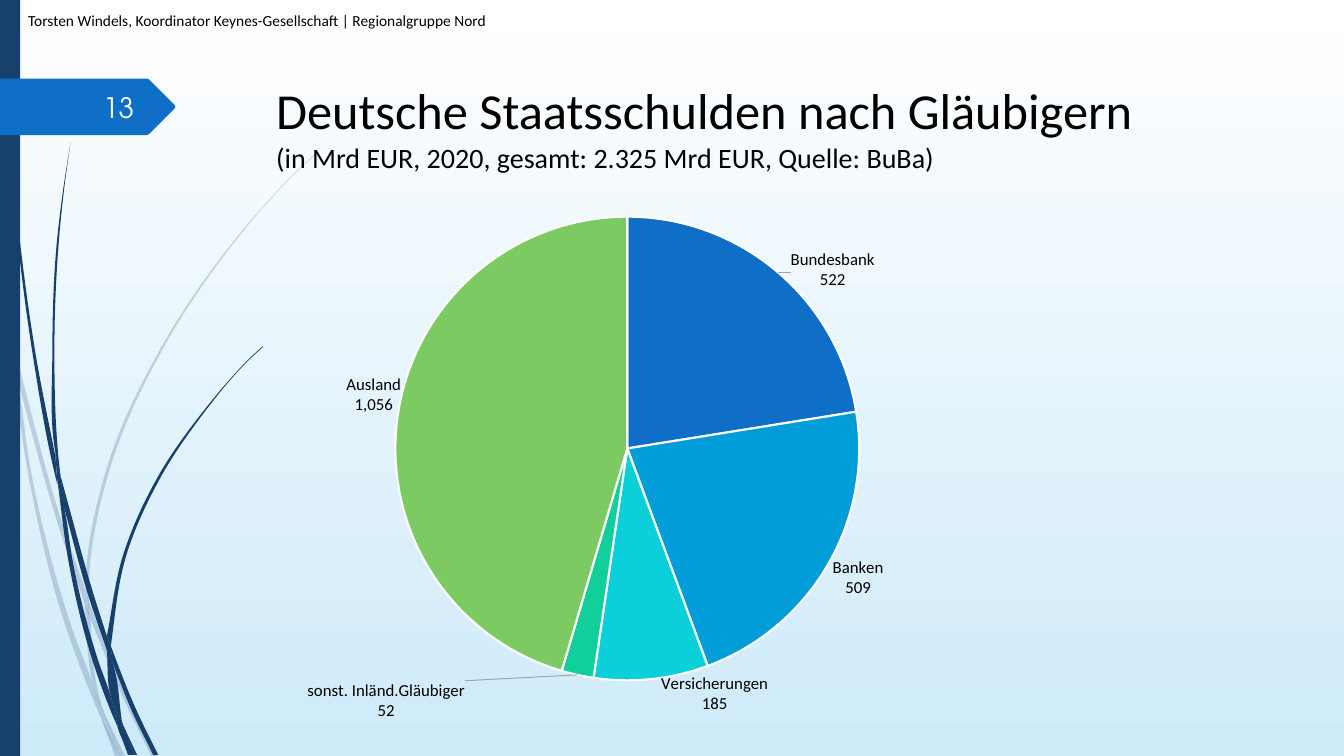
from copy import deepcopy
from math import dist
from typing import NamedTuple

from lxml.etree import SubElement
from pptx import Presentation
from pptx.chart.data import CategoryChartData
from pptx.dml.color import RGBColor
from pptx.enum.chart import XL_CHART_TYPE as ChartType, XL_LABEL_POSITION as LabelPosition
from pptx.enum.shapes import MSO_SHAPE as Shape
from pptx.enum.text import MSO_ANCHOR as Anchor, PP_ALIGN as Align
from pptx.oxml.ns import qn
from pptx.util import Emu, Pt

PX = 9144  # 100 px to the inch
NAVY, BLUE, BLACK, WHITE = "17406D", "0F6FC6", "000000", "FFFFFF"
Point = tuple[float, float]


class Ribbon(NamedTuple):
    """A tapering blade of grass: one edge out, the other edge back."""
    out: list[Point]
    back: list[Point]


class Slice(NamedTuple):
    name: str
    value: int
    colour: str
    label_shift: Point


PALE_GRASS = [
    Ribbon([(11, 350), (9, 322), (0, 282)], [(0, 299), (10, 344), (11, 350)]),
    Ribbon([(14, 345), (62, 520), (85, 586)], [(84, 599), (58, 522), (17, 376)]),
    Ribbon([(88, 596), (92, 607), (127, 692), (155, 750)], [(150, 750), (123, 694), (88, 610)]),
    Ribbon([(119, 750), (124, 750)], [(105, 711)]),
    Ribbon([(11, 350), (17, 376), (31, 469), (70, 619), (93, 683), (99, 707), (101, 714)],
           [(101, 714), (92, 693), (65, 621), (28, 470), (11, 350)]),
    Ribbon([(84, 599), (88, 608), (91, 646), (103, 706), (105, 711)],
           [(105, 711), (96, 692), (93, 683), (87, 646), (84, 599)]),
    Ribbon([(88, 596), (88, 584), (110, 462), (160, 349), (229, 245), (268, 198), (290, 175), (312, 154)],
           [(312, 153), (289, 175), (268, 197), (228, 244), (158, 348), (107, 461), (85, 584), (85, 586)]),
    Ribbon([(101, 714), (114, 750)], [(119, 750)]),
    Ribbon([(88, 610), (88, 596), (85, 586)], [(84, 599)]),
    Ribbon([(93, 683), (99, 707), (101, 714), (119, 750)], [(119, 750), (105, 711), (96, 692)]),
]
DARK_GRASS = [
    Ribbon([(3, 0), (4, 48), (7, 110), (17, 233), (33, 355), (56, 477), (57, 481)],
           [(55, 453), (36, 355), (19, 232), (8, 109), (5, 48), (4, 0)]),
    Ribbon([(60, 472), (93, 590), (106, 631)], [(106, 645), (88, 592), (64, 505)]),
    Ribbon([(110, 641), (113, 649), (136, 706), (157, 749)], [(152, 749), (132, 708), (111, 656)]),
    Ribbon([(57, 477), (64, 505), (72, 556), (98, 657), (110, 691), (116, 717), (117, 722)],
           [(117, 722), (111, 708), (93, 659), (68, 557), (57, 477)]),
    Ribbon([(60, 472), (58, 453), (54, 349), (58, 245), (63, 193), (70, 141)],
           [(70, 141), (62, 193), (56, 245), (52, 349), (55, 449), (60, 472)]),
    Ribbon([(133, 749), (136, 749)], [(122, 719)]),
    Ribbon([(57, 477), (64, 505), (60, 472)], [(55, 449), (55, 453)]),
    Ribbon([(110, 641), (111, 633), (125, 552), (158, 476), (205, 406), (231, 374), (245, 359), (261, 344)],
           [(260, 344), (245, 358), (231, 373), (204, 405), (156, 474), (122, 551), (106, 631)]),
    Ribbon([(117, 722), (127, 749)], [(131, 749)]),
    Ribbon([(106, 645), (110, 691), (116, 706), (122, 719)], [(121, 716), (111, 656), (109, 651)]),
    Ribbon([(106, 645), (111, 656), (110, 641)], [(106, 631)]),
    Ribbon([(110, 691), (116, 717), (117, 722), (130, 749)], [(133, 749), (122, 719), (116, 706)]),
]
FLAG = [(0, 78), (146, 78), (148, 79), (173, 104), (174, 106), (173, 108), (148, 133), (146, 134), (0, 134)]
SLICES = [
    Slice("Bundesbank", 522, BLUE, (0.01, 0.04)),
    Slice("Banken", 509, "009DD9", (0, -0.02)),
    Slice("Versicherungen", 185, "0BD0D9", (0.01, -0.02)),
    Slice("sonst. Inländ.Gläubiger", 52, "10CF9B", (-0.12, 0)),
    Slice("Ausland", 1056, "7CCA62", (0.01, 0)),
]


def rgb(colour: str) -> RGBColor:
    return RGBColor.from_string(colour)


def px(*lengths: float) -> list[Emu]:
    return [Emu(round(length * PX)) for length in lengths]


def bezier(knots: list[Point]) -> list[Point]:
    """Two control points and an end point for each span of a smooth curve."""
    spans = [dist(a, b) for a, b in zip(knots, knots[1:])]
    slopes = [((c - a) / span, (d - b) / span) for (a, b), (c, d), span in zip(knots, knots[1:], spans)]
    tangents = slopes[:1] + [
        tuple((f * after + g * before) / (before + after) for f, g in zip(first, second))
        for first, second, before, after in zip(slopes, slopes[1:], spans, spans[1:])] + slopes[-1:]
    points = []
    for (a, b), (c, d), (e, f), (g, h), span in zip(knots, knots[1:], tangents, tangents[1:], spans):
        third = span / 3
        points += [(a + e * third, b + f * third), (c - g * third, d - h * third), (c, d)]
    return points


def paint(shape, colour: str, opacity: int = 100) -> None:
    shape.shadow.inherit = False
    shape.line.fill.background()
    shape.fill.solid()
    shape.fill.fore_color.rgb = rgb(colour)
    if opacity < 100:
        tint = shape.fill._xPr.find(f".//{qn('a:srgbClr')}")
        SubElement(tint, qn("a:alpha"), val=str(opacity * 1000))


def add_outline(shapes, points: list[Point]):
    first, *rest = [px(*point) for point in points]
    builder = shapes.build_freeform(*first)
    builder.add_line_segments(rest, close=True)
    return builder.convert_to_shape()


def draw_grass(page, ribbons: list[Ribbon], opacity: int) -> None:
    group = page.shapes.add_group_shape()
    for out, back in ribbons:
        turn = bezier([out[-1], back[0]]) if out[-1] != back[0] else []
        blade = add_outline(group.shapes, [out[0], *bezier(out), *turn, *bezier(back)])
        lines = list(blade._element.iter(qn("a:lnTo")))
        for triple in zip(lines[::3], lines[1::3], lines[2::3]):
            curve = triple[0].makeelement(qn("a:cubicBezTo"))
            triple[0].addprevious(curve)
            for line in triple:
                curve.append(line[0])
                line.getparent().remove(line)
        paint(blade, NAVY, opacity)


def add_text(page, frame: tuple[int, int, int, int], *lines: tuple[str, int], font: str = "Calibri",
             colour: str = BLACK, align: Align = Align.LEFT, anchor: Anchor = Anchor.MIDDLE) -> None:
    """One paragraph; each line is a text with its size in points."""
    box = page.shapes.add_textbox(*px(*frame)).text_frame
    box.word_wrap, box.vertical_anchor = True, anchor
    para = box.paragraphs[0]
    para.alignment = align
    for index, (text, size) in enumerate(lines):
        if index:
            para.add_line_break()
        span = para.add_run()
        span.text = text
        span.font.name, span.font.size = font, Pt(size)
        span.font.color.rgb = rgb(colour)


def add_layout(parent, position: int, **values: float | str) -> None:
    layout = SubElement(parent, qn("c:layout"))
    parent.insert(position, layout)
    manual = SubElement(layout, qn("c:manualLayout"))
    for tag, value in values.items():
        SubElement(manual, qn(f"c:{tag}"), val=str(value))


def label_slices(labels) -> None:
    labels.show_category_name = labels.show_value = True
    labels.number_format, labels.number_format_is_linked = "#,##0", False
    labels.position = LabelPosition.OUTSIDE_END
    element = labels._element
    for old in element.findall(qn("c:showLeaderLines")):
        element.remove(old)
    SubElement(element, qn("c:separator")).text = "\n"
    shared = list(element)
    for index, part in enumerate(SLICES):
        label = SubElement(element, qn("c:dLbl"))
        element.insert(index, label)
        SubElement(label, qn("c:idx"), val=str(index))
        add_layout(label, 1, x=part.label_shift[0], y=part.label_shift[1])
        label.extend(deepcopy(child) for child in shared)
    SubElement(element, qn("c:showLeaderLines"), val="1")
    leader = SubElement(SubElement(element, qn("c:leaderLines")), qn("c:spPr"))
    line = SubElement(leader, qn("a:ln"), w=str(Pt(0.75)))
    SubElement(SubElement(line, qn("a:solidFill")), qn("a:srgbClr"), val="A6A6A6")


def add_creditor_pie(page) -> None:
    data = CategoryChartData(number_format="#,##0")
    data.categories = [part.name for part in SLICES]
    data.add_series("Series 1", [part.value for part in SLICES])
    chart = page.shapes.add_chart(ChartType.PIE, *px(153, 187, 920, 549), data).chart
    chart.has_title = chart.has_legend = False
    chart.font.name, chart.font.size = "Calibri", Pt(12)
    chart.font.color.rgb = rgb(BLACK)
    chart.plots[0].vary_by_categories = True
    series = chart.plots[0].series[0]
    for index, part in enumerate(SLICES):
        style = series.points[index].format
        style.fill.solid()
        style.fill.fore_color.rgb = rgb(part.colour)
        style.line.color.rgb, style.line.width = rgb(WHITE), Pt(1.5)
    label_slices(series.data_labels)
    area = chart._chartSpace.find(f".//{qn('c:plotArea')}")
    for old in area.findall(qn("c:layout")):
        area.remove(old)
    add_layout(area, 0, layoutTarget="inner", xMode="edge", yMode="edge", x=0.26, y=0.05, w=0.5, h=0.84)


def main() -> None:
    deck = Presentation()
    deck.slide_width, deck.slide_height = px(1333, 750)
    page = deck.slides.add_slide(deck.slide_layouts[6])
    backdrop = page.background.fill
    backdrop.gradient()
    backdrop.gradient_angle = 270
    for stop, colour in zip(backdrop.gradient_stops, (WHITE, "CEEAF9")):
        stop.color.rgb = rgb(colour)
    draw_grass(page, PALE_GRASS, opacity=20)
    draw_grass(page, DARK_GRASS, opacity=100)
    paint(page.shapes.add_shape(Shape.RECTANGLE, *px(0, 0, 20, 750)), NAVY)
    paint(add_outline(page.shapes, FLAG), BLUE)
    add_text(page, (264, 74, 1069, 106), ("Deutsche Staatsschulden nach Gläubigern", 36),
             ("(in Mrd EUR, 2020, gesamt: 2.325 Mrd EUR, Quelle: BuBa)", 20), anchor=Anchor.TOP)
    add_text(page, (58, 86, 85, 40), ("13", 20), font="TeX Gyre Adventor", colour="FEFFFF", align=Align.RIGHT)
    add_creditor_pie(page)
    add_text(page, (18, 0, 833, 40), ("Torsten Windels, Koordinator Keynes-Gesellschaft | Regionalgruppe Nord", 11))
    deck.save("out.pptx")


if __name__ == "__main__":
    main()
